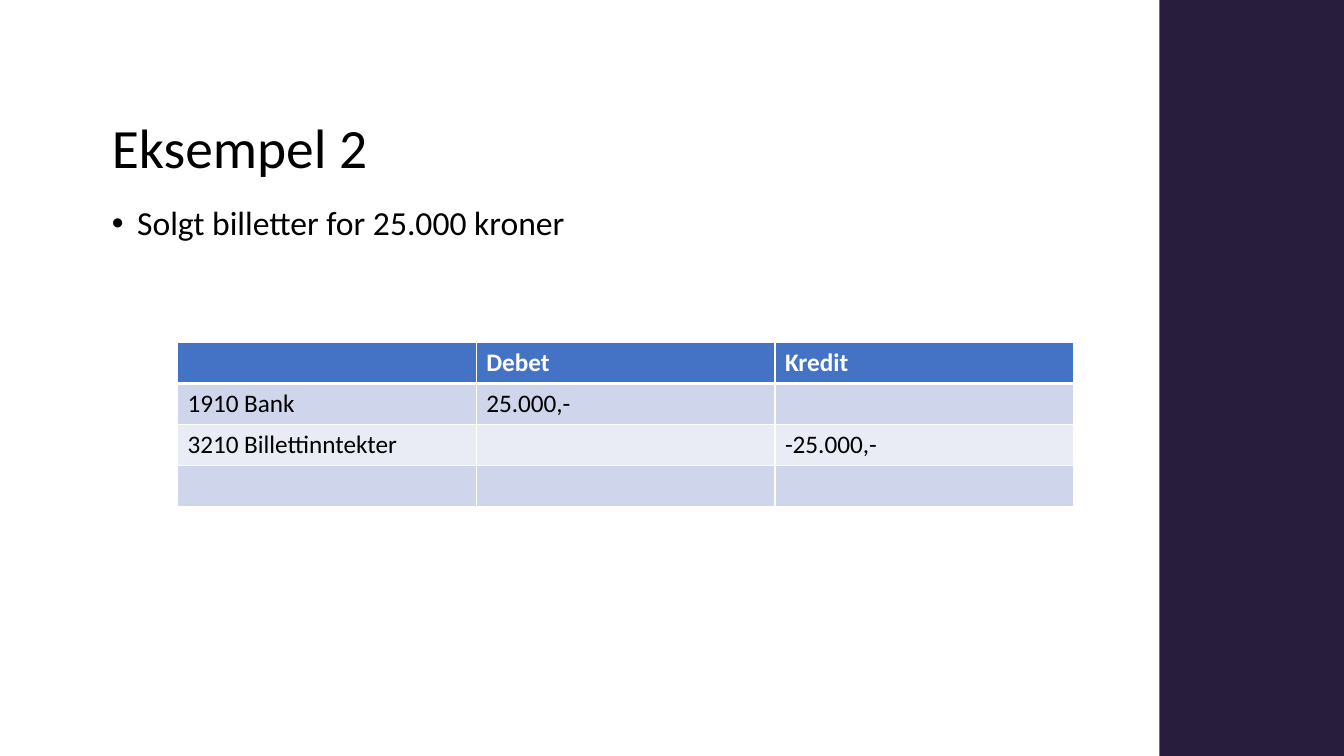
from dataclasses import dataclass

from lxml import etree
from pptx import Presentation
from pptx.dml.color import RGBColor
from pptx.enum.shapes import MSO_SHAPE
from pptx.enum.text import MSO_ANCHOR, MSO_AUTO_SIZE, PP_ALIGN
from pptx.oxml.ns import qn
from pptx.util import Inches, Pt

RECT = MSO_SHAPE.RECTANGLE
TOP, MIDDLE = MSO_ANCHOR.TOP, MSO_ANCHOR.MIDDLE
LEFT = PP_ALIGN.LEFT
NO_FIT = MSO_AUTO_SIZE.NONE


@dataclass(frozen=True)
class Theme:
    font: str = "Calibri"
    dark: str = "000000"
    light: str = "FFFFFF"
    band: str = "291D3D"
    head: str = "4472C4"
    rows: tuple = ("CFD5EA", "E9EBF5")
    title: float = 39.6
    body: float = 24
    cell: float = 18


THEME = Theme()
LEDGER = [
    ["", "Debet", "Kredit"],
    ["1910 Bank", "25.000,-", ""],
    ["3210 Billettinntekter", "", "-25.000,-"],
    ["", "", ""],
]


def style(font, size, color, bold=False):
    font.name = THEME.font
    font.size = Pt(size)
    font.bold = bold
    font.color.rgb = RGBColor.from_string(color)


def place(shape, left, top, width, height):
    shape.left, shape.top = Inches(left), Inches(top)
    shape.width, shape.height = Inches(width), Inches(height)


def fill_text(shape, text, size, anchor):
    """Set one left-aligned paragraph in a placeholder and return it."""
    frame = shape.text_frame
    frame.text = text
    frame.word_wrap = True
    frame.auto_size = NO_FIT
    frame.vertical_anchor = anchor
    para = frame.paragraphs[0]
    para.alignment = LEFT
    para.line_spacing = 0.9
    para.space_before = Pt(0)
    style(para.runs[0].font, size, THEME.dark)
    return para


def add_title(slide, text):
    title = slide.shapes.title
    place(title, 1.01, 1.14, 9.78, 0.71)
    fill_text(title, text, THEME.title, MIDDLE)


def add_bullet(slide, text):
    body = slide.placeholders[1]
    place(body, 1.01, 2, 9.78, 4.76)
    para = fill_text(body, text, THEME.body, TOP)
    props = para._p.get_or_add_pPr()
    props.set("marL", str(Inches(0.25)))
    props.set("indent", str(-Inches(0.25)))
    etree.SubElement(props, qn("a:buChar"), char="•")


def add_band(slide):
    band = slide.shapes.add_shape(
        RECT, Inches(11.5), 0, Inches(1.83), Inches(7.5))
    band.shadow.inherit = False
    band.fill.solid()
    band.fill.fore_color.rgb = RGBColor.from_string(THEME.band)
    band.line.fill.background()


def add_edges(cell, top, bottom):
    """Draw the four cell borders; top and bottom are widths in points."""
    props = cell._tc.get_or_add_tcPr()
    for side, width in zip("LRTB", (1, 1, top, bottom)):
        line = etree.SubElement(props, qn(f"a:ln{side}"), w=str(Pt(width)))
        solid = etree.SubElement(line, qn("a:solidFill"))
        etree.SubElement(solid, qn("a:srgbClr"), val=THEME.light)


def add_ledger(slide, data):
    count, wide = len(data), len(data[0])
    frame = slide.shapes.add_table(
        count, wide, Inches(1.76), Inches(3.4),
        Inches(8.89), Inches(1.62))
    table = frame.table
    for y, row in enumerate(data):
        head = y == 0
        shade = THEME.head if head else THEME.rows[(y - 1) % 2]
        color = THEME.light if head else THEME.dark
        for x, text in enumerate(row):
            cell = table.cell(y, x)
            add_edges(cell, 3 if y == 1 else 1, 3 if head else 1)
            cell.fill.solid()
            cell.fill.fore_color.rgb = RGBColor.from_string(shade)
            cell.text = text
            para = cell.text_frame.paragraphs[0]
            style(para.font, THEME.cell, color, head)
            for run in para.runs:
                style(run.font, THEME.cell, color, head)


def main():
    deck = Presentation()
    deck.slide_width, deck.slide_height = Inches(13.33), Inches(7.5)
    slide = deck.slides.add_slide(deck.slide_layouts[1])
    add_band(slide)
    add_title(slide, "Eksempel 2")
    add_bullet(slide, "Solgt billetter for 25.000 kroner")
    add_ledger(slide, LEDGER)
    deck.save("out.pptx")


if __name__ == "__main__":
    main()
